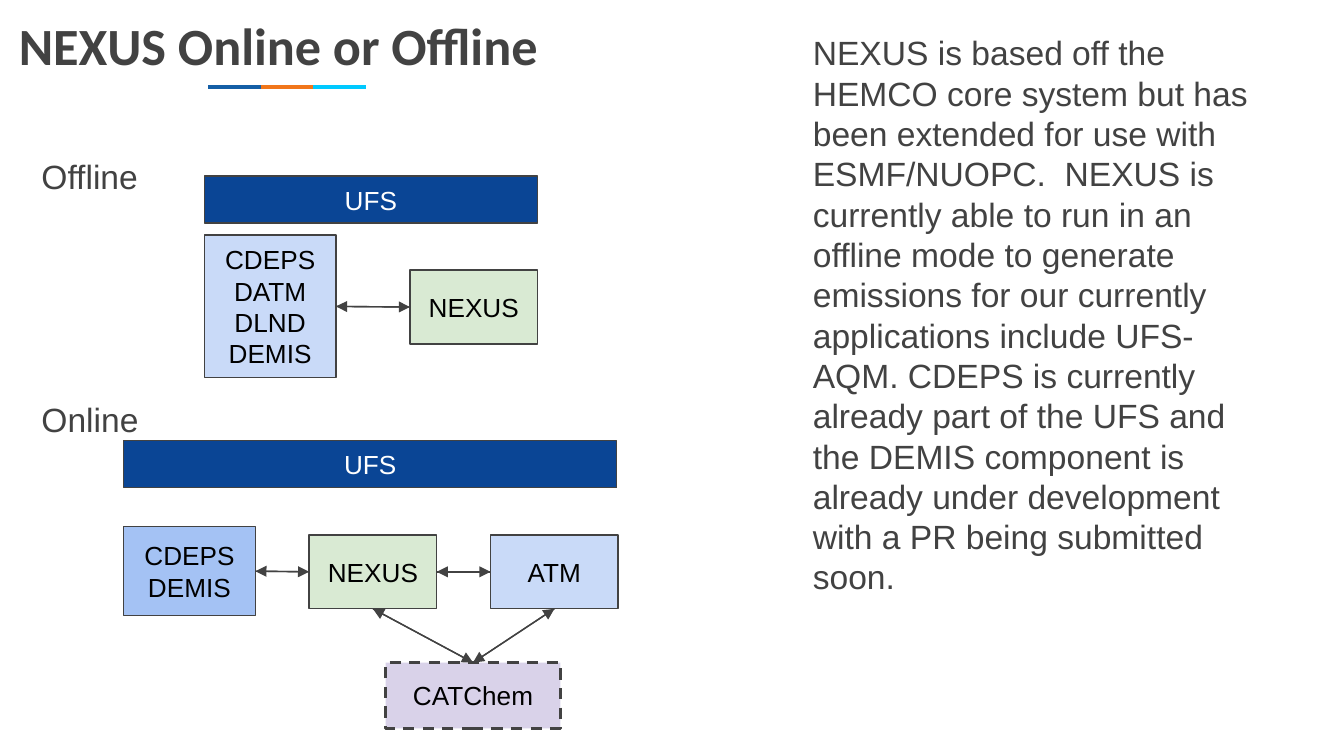
from dataclasses import dataclass

from lxml.etree import SubElement
from pptx import Presentation
from pptx.dml.color import RGBColor
from pptx.enum.dml import MSO_LINE
from pptx.enum.shapes import MSO_CONNECTOR, MSO_SHAPE
from pptx.enum.text import MSO_ANCHOR, PP_ALIGN
from pptx.oxml.ns import qn
from pptx.shapes.autoshape import Shape
from pptx.shapes.connector import Connector
from pptx.util import Inches, Pt

COLORS = {
    "ink": "424242", "black": "000000", "white": "FFFFFF",
    "navy": "0A4595", "pale_blue": "C9DAF8", "mid_blue": "A4C2F4",
    "green": "D9EAD3", "lilac": "D9D2E9",
    "accent_blue": "145FA6", "accent_orange": "F1761A", "accent_cyan": "00C9FF",
}
TOP, LEFT, BOTTOM, RIGHT = range(4)  # connection sites of a rectangle


@dataclass
class Box:
    text: str  # \n starts a paragraph, \v breaks a line
    left: float
    top: float
    width: float
    height: float
    fill: str
    font_color: str = "black"
    dashed: bool = False


@dataclass
class Note:
    text: str
    left: float
    top: float
    width: float
    height: float


@dataclass
class Port:
    component: str
    site: int


def color(name: str) -> RGBColor:
    return RGBColor.from_string(COLORS[name])


def write(shape: Shape, text: str, size: float, font_color: str,
          align: PP_ALIGN = PP_ALIGN.LEFT, anchor: MSO_ANCHOR = MSO_ANCHOR.TOP,
          font_name: str = "Arial", bold: bool = False) -> None:
    frame = shape.text_frame
    frame.word_wrap = True
    frame.vertical_anchor = anchor
    frame.margin_left = frame.margin_right = Inches(0.1)
    frame.margin_top = frame.margin_bottom = Inches(0.1)
    frame.text = text
    for paragraph in frame.paragraphs:
        paragraph.alignment = align
        paragraph.font.name = font_name
        paragraph.font.size = Pt(size)
        paragraph.font.bold = bold
        paragraph.font.color.rgb = color(font_color)


def draw_box(box: Box) -> Shape:
    shape = slide.shapes.add_shape(
        MSO_SHAPE.RECTANGLE, Inches(box.left), Inches(box.top),
        Inches(box.width), Inches(box.height))
    shape.shadow.inherit = False
    shape.fill.solid()
    shape.fill.fore_color.rgb = color(box.fill)
    shape.line.color.rgb = color("ink")
    shape.line.width = Pt(1.5 if box.dashed else 0.75)
    if box.dashed:
        shape.line.dash_style = MSO_LINE.DASH
    write(shape, box.text, 14, box.font_color, PP_ALIGN.CENTER, MSO_ANCHOR.MIDDLE)
    return shape


def draw_line(x1: float, y1: float, x2: float, y2: float,
              line_color: str, width: float) -> Connector:
    line = slide.shapes.add_connector(
        MSO_CONNECTOR.STRAIGHT, Inches(x1), Inches(y1), Inches(x2), Inches(y2))
    line.line.color.rgb = color(line_color)
    line.line.width = Pt(width)
    SubElement(line._element.spPr, qn("a:effectLst"))
    return line


def draw_arrow(start: Port, end: Port) -> None:
    arrow = draw_line(0, 0, 1, 1, "ink", 0.75)
    arrow.begin_connect(components[start.component], start.site)
    arrow.end_connect(components[end.component], end.site)
    SubElement(arrow.line._get_or_add_ln(), qn("a:tailEnd"), type="triangle")


def draw_note(note: Note) -> None:
    shape = slide.shapes.add_textbox(
        Inches(note.left), Inches(note.top), Inches(note.width), Inches(note.height))
    write(shape, note.text, 18, "ink")


# Widescreen 16:9 slide
presentation = Presentation()
presentation.slide_width = Inches(10)
presentation.slide_height = Inches(10 * 9 / 16)
slide = presentation.slides.add_slide(presentation.slide_layouts[5])

# Title and its three-coloured rule
title = slide.shapes.title
title.left, title.top = Inches(0.04), Inches(0)
title.width, title.height = Inches(7.69), Inches(1.09)
write(title, "NEXUS Online or Offline", 28, "ink", font_name="Calibri", bold=True)

RULE_LEFT, RULE_TOP, RULE_STEP = 1.55, 0.65, 0.39
for index, accent in enumerate(("accent_blue", "accent_orange", "accent_cyan")):
    start = RULE_LEFT + index * RULE_STEP
    draw_line(start, RULE_TOP, start + RULE_STEP, RULE_TOP, accent, 2.25)

# Components of the offline and online set-ups
BAR_HEIGHT, MODEL_WIDTH, MODEL_HEIGHT, CDEPS_WIDTH = 0.35, 0.95, 0.55, 0.98
ONLINE_TOP = 3.98
boxes = {
    "offline UFS": Box("UFS", 1.52, 1.31, 2.48, BAR_HEIGHT, "navy", "white"),
    "offline CDEPS": Box("CDEPS\nDATM\nDLND\vDEMIS", 1.52, 1.75, CDEPS_WIDTH, 1.06,
                         "pale_blue"),
    "offline NEXUS": Box("NEXUS", 3.05, 2.01, MODEL_WIDTH, MODEL_HEIGHT, "green"),
    "online UFS": Box("UFS", 0.92, 3.28, 3.67, BAR_HEIGHT, "navy", "white"),
    "online CDEPS": Box("CDEPS\vDEMIS", 0.92, 3.92, CDEPS_WIDTH, 0.66, "mid_blue"),
    "online NEXUS": Box("NEXUS", 2.3, ONLINE_TOP, MODEL_WIDTH, MODEL_HEIGHT, "green"),
    "ATM": Box("ATM", 3.65, ONLINE_TOP, MODEL_WIDTH, MODEL_HEIGHT, "pale_blue"),
    "CATChem": Box("CATChem", 2.87, 4.93, 1.3, 0.49, "lilac", dashed=True),
}
components = {name: draw_box(box) for name, box in boxes.items()}

# Exchanges between components, one arrow each way
for here, there in (
    (Port("offline CDEPS", RIGHT), Port("offline NEXUS", LEFT)),
    (Port("online CDEPS", RIGHT), Port("online NEXUS", LEFT)),
    (Port("online NEXUS", RIGHT), Port("ATM", LEFT)),
    (Port("online NEXUS", BOTTOM), Port("CATChem", TOP)),
    (Port("ATM", BOTTOM), Port("CATChem", TOP)),
):
    draw_arrow(here, there)
    draw_arrow(there, here)

# Mode labels and description
description = (
    "NEXUS is based off the HEMCO core system but has been extended for use with "
    "ESMF/NUOPC.  NEXUS is currently able to run in an offline mode to generate "
    "emissions for our currently applications include UFS-AQM. CDEPS is currently "
    "already part of the UFS and the DEMIS component is already under development "
    "with a PR being submitted soon."
)
for note in (
    Note("Offline", 0.21, 1.06, 0.95, 0.5),
    Note("Online", 0.21, 2.87, 0.95, 0.5),
    Note(description, 5.95, 0.14, 3.54, 4.44),
):
    draw_note(note)

presentation.save("out.pptx")
